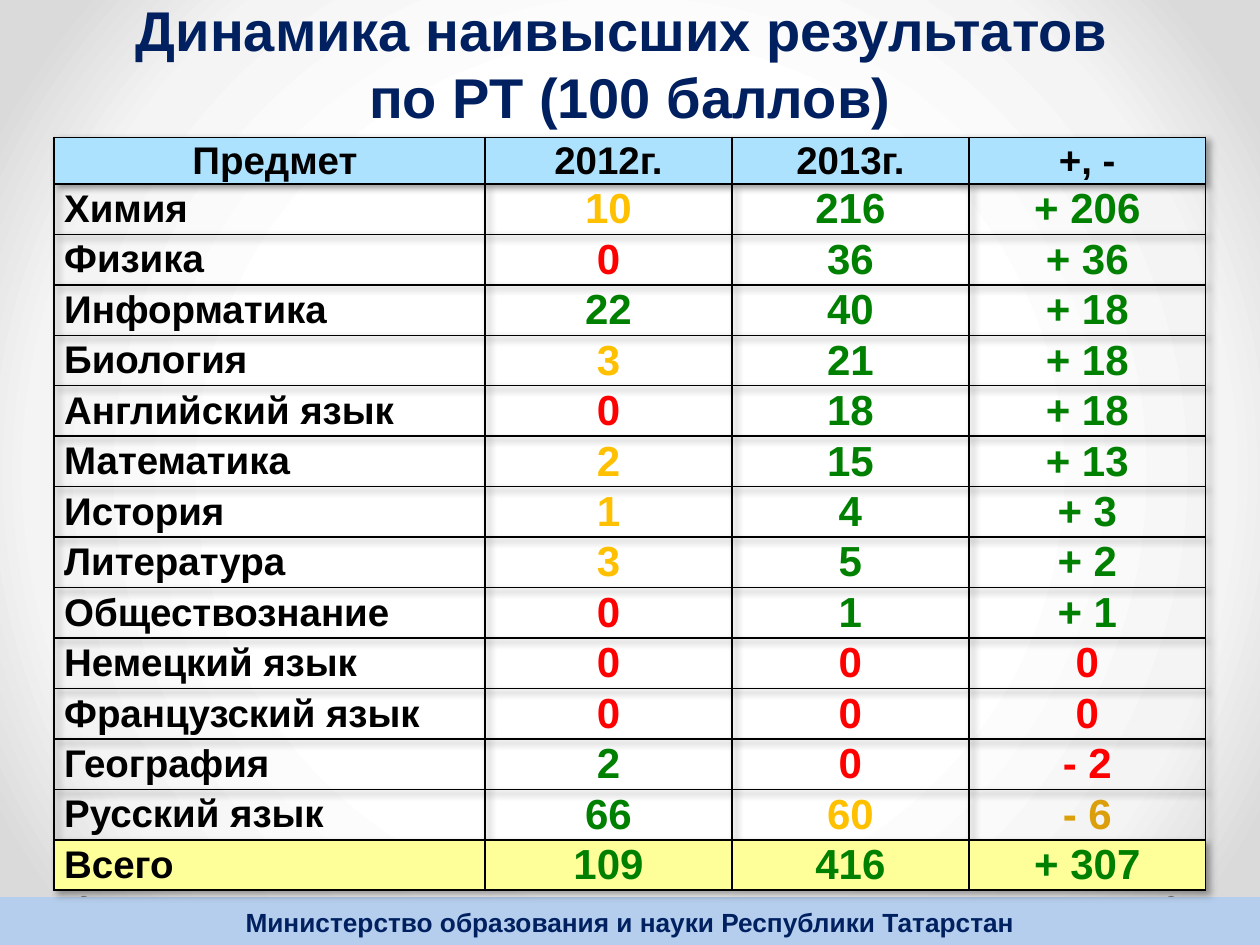
import pptx
import pptx.dml.color
import pptx.enum.shapes
import pptx.enum.text
import pptx.oxml
import pptx.util
import lxml.etree

Inches = pptx.util.Inches
Pt = pptx.util.Pt
RGBColor = pptx.dml.color.RGBColor
MIDDLE = pptx.enum.text.MSO_ANCHOR.MIDDLE
CENTER = pptx.enum.text.PP_ALIGN.CENTER
LEFT = pptx.enum.text.PP_ALIGN.LEFT
SHAPES = pptx.enum.shapes.MSO_SHAPE
NS = 'xmlns:a="http://schemas.openxmlformats.org/drawingml/2006/main"'

NAVY = RGBColor(0x00, 0x20, 0x60)
BLACK = RGBColor(0x00, 0x00, 0x00)
GREEN = RGBColor(0x00, 0x80, 0x00)
RED = RGBColor(0xFF, 0x00, 0x00)
AMBER = RGBColor(0xFF, 0xC0, 0x00)
OCHRE = RGBColor(0xDC, 0x9F, 0x0C)
HEADER_BLUE = RGBColor(0xAD, 0xE2, 0xFE)
TOTAL_YELLOW = RGBColor(0xFF, 0xFF, 0x99)
FOOTER_BLUE = RGBColor(0xB5, 0xCE, 0xED)
DOT_GRAY = RGBColor(0x80, 0x80, 0x80)
BACKDROP = [(50, RGBColor(0xFF, 0xFF, 0xFF)),
            (76, RGBColor(0xF4, 0xF4, 0xF4)),
            (92, RGBColor(0xDA, 0xDA, 0xDA))]

HEADINGS = ["\u00a0Предмет", "2012г.", "2013г.", "+, -"]
# Subject, then the values and the colours of 2012, 2013 and the change
RESULTS = [
    ("Химия", ["10", "216", "+ 206"], [AMBER, GREEN, GREEN]),
    ("Физика", ["0", "36", "+ 36"], [RED, GREEN, GREEN]),
    ("Информатика", ["22", "40", "+ 18"], [GREEN] * 3),
    ("Биология", ["3", "21", "+ 18"], [AMBER, GREEN, GREEN]),
    ("Английский язык", ["0", "18", "+ 18"], [RED, GREEN, GREEN]),
    ("Математика", ["2", "15", "+ 13"], [AMBER, GREEN, GREEN]),
    ("История", ["1", "4", "+ 3"], [AMBER, GREEN, GREEN]),
    ("Литература", ["3", "5", "+ 2"], [AMBER, GREEN, GREEN]),
    ("Обществознание", ["0", "1", "+ 1"], [RED, GREEN, GREEN]),
    ("Немецкий язык", ["0", "0", "0"], [RED] * 3),
    ("Французский язык", ["0", "0", "0"], [RED] * 3),
    ("География", ["2", "0", "- 2"], [GREEN, RED, RED]),
    ("Русский язык", ["66", "60", "- 6"], [GREEN, AMBER, OCHRE]),
    ("Всего", ["109", "416", "+ 307"], [GREEN] * 3),
]


def write(frame, text, size, color, align=CENTER):
    frame.text = text
    paragraph = frame.paragraphs[0]
    paragraph.alignment = align
    for run in paragraph.runs:
        style = {"name": "Arial", "size": Pt(size), "bold": True}
        for key, value in style.items():
            setattr(run.font, key, value)
        run.font.color.rgb = color


def paint_background(slide):
    slide.background.fill.solid()
    properties = slide.background._cSld.bg.bgPr
    stops = "".join(f'<a:gs pos="{place * 1000}"><a:srgbClr val="{color}"/></a:gs>'
                    for place, color in BACKDROP)
    gradient = pptx.oxml.parse_xml(
        f'<a:gradFill {NS} rotWithShape="1"><a:gsLst>{stops}</a:gsLst>'
        '<a:path path="circle"><a:fillToRect l="50000" t="50000" r="50000" b="50000"/>'
        '</a:path></a:gradFill>')
    properties.replace(properties[0], gradient)


def add_plain_shape(slide, kind, box, color):
    shape = slide.shapes.add_shape(kind, *map(Inches, box))
    shape.shadow.inherit = False
    shape.fill.solid()
    shape.fill.fore_color.rgb = color
    shape.line.fill.background()
    return shape


def add_footer(slide, left, top, width, height):
    # Dots peeking out above the footer band
    for dot_left in (left + 9.25, left + 0.62):
        add_plain_shape(slide, SHAPES.OVAL, (dot_left, top - 0.01, 0.09, 0.09), DOT_GRAY)
    band = add_plain_shape(slide, SHAPES.RECTANGLE, (left, top, width, height), FOOTER_BLUE)
    band.text_frame.vertical_anchor = MIDDLE
    write(band.text_frame, "Министерство образования и науки Республики Татарстан", 15, NAVY)


def add_title(slide, left, top, width, height):
    title = slide.shapes.add_textbox(*map(Inches, (left, top, width, height))).text_frame
    layout = {"word_wrap": True, "vertical_anchor": MIDDLE,
              "margin_left": Inches(0.1), "margin_right": Inches(0.1),
              "margin_top": Inches(0.08), "margin_bottom": Inches(0.08)}
    for key, value in layout.items():
        setattr(title, key, value)
    write(title, "Динамика наивысших результатов \vпо РТ (100 баллов)", 32, NAVY)


def format_cell(cell, left_margin, right_margin, fill):
    layout = {"vertical_anchor": MIDDLE, "margin_top": 0, "margin_bottom": 0,
              "margin_left": Inches(left_margin), "margin_right": Inches(right_margin)}
    for key, value in layout.items():
        setattr(cell, key, value)
    properties = cell._tc.get_or_add_tcPr()
    for side in ("lnL", "lnR", "lnT", "lnB"):
        properties.append(pptx.oxml.parse_xml(
            f'<a:{side} {NS} w="{Pt(1)}"><a:solidFill><a:srgbClr val="{BLACK}"/>'
            f'</a:solidFill></a:{side}>'))
    if fill is None:
        cell.fill.background()
    else:
        cell.fill.solid()
        cell.fill.fore_color.rgb = fill


def add_results(slide, left, top, width, height):
    header_height = 0.37
    row_height = (height - header_height) / len(RESULTS)
    table = slide.shapes.add_table(len(RESULTS) + 1, len(HEADINGS),
                                   *map(Inches, (left, top, width, height))).table
    table.horz_banding = False
    table.first_row = False
    for column, column_width in zip(table.columns, (3.42, 1.96, 1.88, 1.88)):
        column.width = Inches(column_width)
    for index, row in enumerate(table.rows):
        row.height = Inches(row_height if index else header_height)

    # Soft shadow behind the whole table
    properties = table._tbl.tblPr
    properties.insert(0, pptx.oxml.parse_xml(
        f'<a:effectLst {NS}><a:outerShdw blurRad="50800" dist="38100" dir="2700000" '
        'algn="tl" rotWithShape="0"><a:srgbClr val="000000"><a:alpha val="40000"/>'
        '</a:srgbClr></a:outerShdw></a:effectLst>'))

    # Header row
    for column, heading in enumerate(HEADINGS):
        cell = table.cell(0, column)
        format_cell(cell, 0.01, 0.01, HEADER_BLUE)
        write(cell.text_frame, heading, 22, BLACK)

    # Subjects and the total
    for row, (subject, values, colors) in enumerate(RESULTS, 1):
        is_total = row == len(RESULTS)
        fill = TOTAL_YELLOW if is_total else None
        margin = 0.07 if is_total else 0.01
        name_cell = table.cell(row, 0)
        format_cell(name_cell, 0.08, 0.01, fill)
        write(name_cell.text_frame, subject, 22, BLACK, LEFT)
        for column, (value, color) in enumerate(zip(values, colors), 1):
            cell = table.cell(row, column)
            format_cell(cell, margin, margin, fill)
            write(cell.text_frame, value, 24, color)


def main():
    deck = pptx.Presentation()
    deck.slide_width = Inches(10)
    deck.slide_height = Inches(7.5)
    slide = deck.slides.add_slide(deck.slide_layouts[6])
    paint_background(slide)
    add_footer(slide, 0, 7.12, 10, 0.39)
    add_title(slide, 0.96, 0.06, 8.08, 0.87)
    add_results(slide, 0.43, 1.09, 9.13, 5.97)
    deck.save("out.pptx")


if __name__ == "__main__":
    main()
